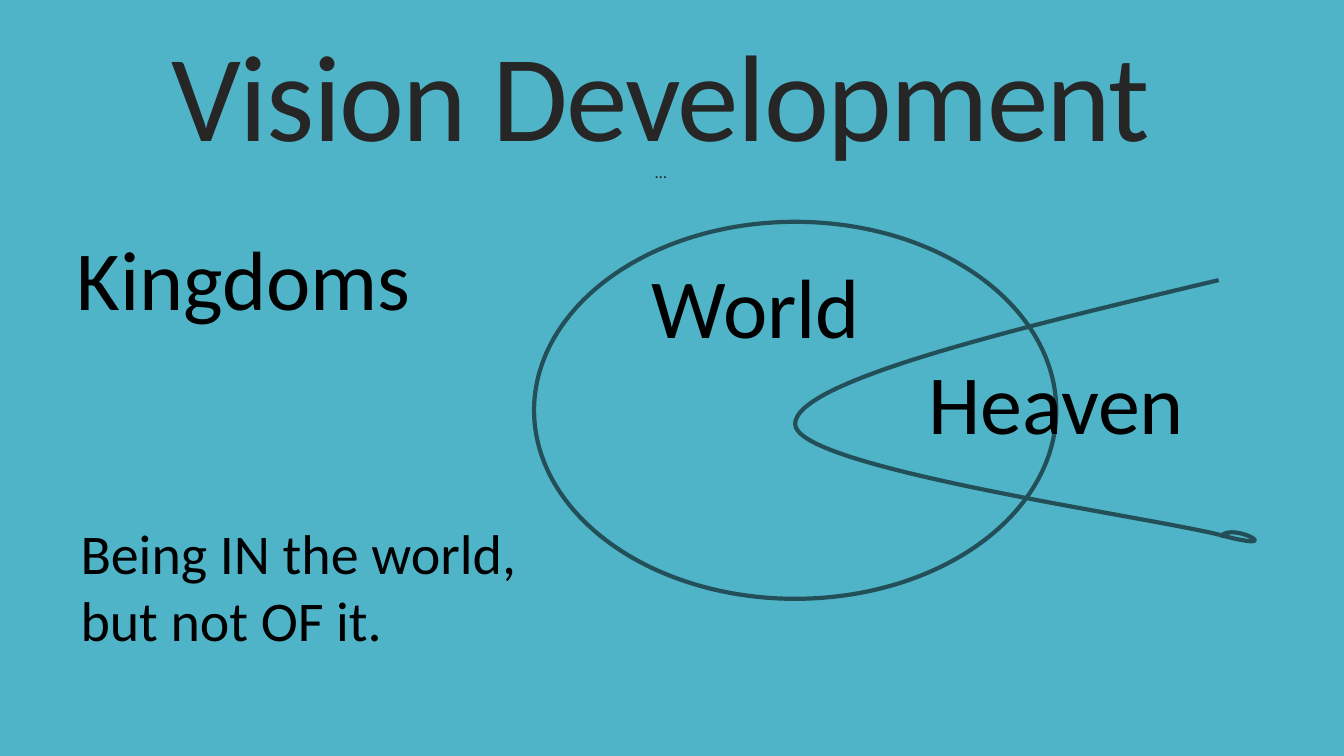
from pptx import Presentation
from pptx.dml.color import RGBColor
from pptx.enum.shapes import MSO_SHAPE
from pptx.enum.text import MSO_ANCHOR, MSO_AUTO_SIZE, PP_ALIGN
from pptx.util import Cm, Pt

SEA = RGBColor(0x50, 0xB4, 0xC8)
TEAL = RGBColor(0x23, 0x4F, 0x58)
DARK = RGBColor(0x26, 0x26, 0x26)
BLACK = RGBColor(0, 0, 0)

# Cubic curves in cm: start, then two handles and an end for each
START = (30.71, 7.06)
CURVES = [
    ((25.37, 8.33), (20.02, 9.63), (20.04, 10.69)),
    ((20.04, 11.79), (29.01, 13.03), (30.78, 13.49)),
    ((32.56, 13.97), (30.99, 13.11), (30.76, 13.54)),
]
STEPS = 40

# Text, left, top, width, height in cm, size in points
LABELS = [
    ("Kingdoms", 1.68, 5.59, 9.04, 2.82, 60),
    ("World", 16.18, 6.3, 7.24, 2.82, 60),
    ("Heaven", 23.14, 8.71, 7.24, 2.82, 60),
    ("Being IN the world, but not OF it.", 1.78, 12.93, 12.04, 3.68, 40),
]


def write(para, text, size, color=BLACK, space=None):
    run = para.add_run()
    run.text = text
    run.font.name = "Calibri"
    run.font.size = Pt(size)
    run.font.color.rgb = color
    if space is not None:
        run._r.get_or_add_rPr().set("spc", str(round(space * 100)))


def place(shape, left, top, width, height):
    shape.left, shape.top = Cm(left), Cm(top)
    shape.width, shape.height = Cm(width), Cm(height)


def add_title(slide):
    title = slide.shapes.title
    place(title, 1.68, 0.79, 29.95, 7.21)
    frame = title.text_frame
    frame.word_wrap = True
    frame.auto_size = MSO_AUTO_SIZE.NONE
    frame.vertical_anchor = MSO_ANCHOR.TOP
    frame.margin_top = Cm(0.4)
    para = frame.paragraphs[0]
    para.alignment = PP_ALIGN.CENTER
    para.line_spacing = 0.8
    write(para, "Vision Development", 88, color=DARK, space=-1.2)
    para.add_line_break()
    write(para, "…", 12, color=DARK, space=-1.2)


def add_label(slide, text, left, top, width, height, size):
    box = slide.shapes.add_textbox(Cm(left), Cm(top), Cm(width), Cm(height))
    box.text_frame.word_wrap = True
    write(box.text_frame.paragraphs[0], text, size)


def outline(shape):
    shape.shadow.inherit = False
    shape.fill.background()
    shape.line.color.rgb = TEAL
    shape.line.width = Pt(3)


def bend(nodes, t):
    """Return the point at t on a cubic curve."""
    u = 1 - t
    parts = (u**3, 3 * u * u * t, 3 * u * t * t, t**3)
    return tuple(Cm(sum(w * n[axis] for w, n in zip(parts, nodes)))
                 for axis in (0, 1))


def add_curve(slide):
    points, last = [], START
    for curve in CURVES:
        nodes = (last, *curve)
        points += [bend(nodes, i / STEPS) for i in range(1, STEPS + 1)]
        last = curve[-1]
    pen = slide.shapes.build_freeform(Cm(START[0]), Cm(START[1]))
    pen.add_line_segments(points, close=False)
    outline(pen.convert_to_shape())


def add_oval(slide):
    oval = slide.shapes.add_shape(
        MSO_SHAPE.OVAL, Cm(13.46), Cm(5.59), Cm(13.16), Cm(9.5))
    outline(oval)


def main():
    deck = Presentation()
    deck.slide_width, deck.slide_height = Cm(33.87), Cm(19.05)
    slide = deck.slides.add_slide(deck.slide_layouts[5])
    slide.background.fill.solid()
    slide.background.fill.fore_color.rgb = SEA

    # Heading
    add_title(slide)

    # Two kingdoms
    add_curve(slide)
    add_oval(slide)

    # Words
    for label in LABELS:
        add_label(slide, *label)

    deck.save("out.pptx")


if __name__ == "__main__":
    main()
